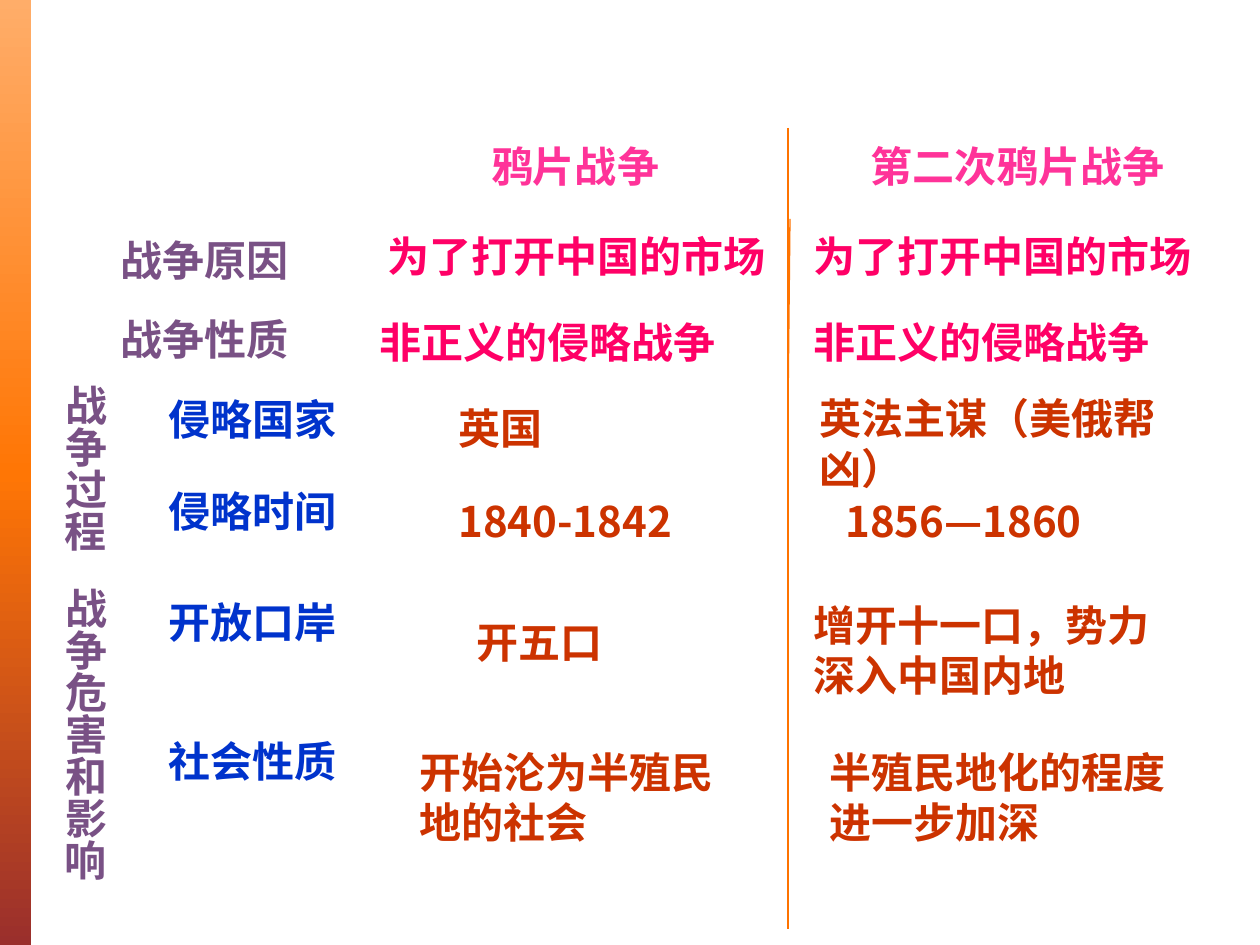
import copy
import pptx
import pptx.util
import pptx.dml.color
import pptx.enum.dml
import pptx.enum.shapes
import pptx.enum.text
import pptx.oxml
import pptx.oxml.ns

PX = 914400 / 126
COLORS = {
    "white": "FFFFFF", "heading": "FF3399", "topic": "795185", "aspect": "0033CC",
    "shared": "FF0066", "detail": "CC3300", "divider": "FE7300",
}
BAR_STOPS = [(0, "FFAD69"), (0.5, "FF7605"), (1, "9A2F2C")]
CJK = "Noto Sans CJK SC"


def px(*lengths):
    return [pptx.util.Emu(round(length * PX)) for length in lengths]


def write(frame, text, color, font=CJK, align=None, spacing=None):
    paragraph = frame.paragraphs[0]
    paragraph.alignment = align
    paragraph.line_spacing = spacing
    run = paragraph.add_run()
    run.text = text
    run.font.size = pptx.util.Pt(24)
    run.font.bold = True
    run.font.name = font
    run.font.color.rgb = pptx.dml.color.RGBColor.from_string(COLORS[color])
    east_asian = pptx.oxml.parse_xml(
        '<a:ea xmlns:a="http://schemas.openxmlformats.org/drawingml/2006/main"/>')
    east_asian.set("typeface", CJK)
    run.font._element.append(east_asian)


deck = pptx.Presentation()
deck.slide_width, deck.slide_height = px(1260, 945)
slide = deck.slides.add_slide(deck.slide_layouts[6])

side_bar = slide.shapes.add_shape(
    pptx.enum.shapes.MSO_SHAPE.RECTANGLE, *px(0, 0, 31, 945))
side_bar.shadow.inherit = False
side_bar.line.fill.background()
side_bar.fill.gradient()
side_bar.fill.gradient_angle = 270
stop_list = side_bar.fill._xPr.find(".//" + pptx.oxml.ns.qn("a:gsLst"))
stop_list.append(copy.deepcopy(stop_list[0]))
for stop, (position, color) in zip(side_bar.fill.gradient_stops, BAR_STOPS):
    stop.position = position
    stop.color.rgb = pptx.dml.color.RGBColor.from_string(color)

column_widths = [96, 215, 430, 455]
row_heights = [94, 78, 76, 92, 111, 139, 190]
frame = slide.shapes.add_table(
    len(row_heights), len(column_widths),
    *px(49, 121, sum(column_widths), sum(row_heights)))
comparison = frame.table
comparison.first_row = comparison.horz_banding = False
style = comparison._tbl.tblPr.find(pptx.oxml.ns.qn("a:tableStyleId"))
style.text = "{2D5ABB26-0587-4C30-8999-92F81FD0307C}"
for column, width in zip(comparison.columns, px(*column_widths)):
    column.width = width
for row, height in zip(comparison.rows, px(*row_heights)):
    row.height = height
for cell in comparison.iter_cells():
    cell.fill.solid()
    cell.fill.fore_color.rgb = pptx.dml.color.RGBColor.from_string(COLORS["white"])

merges = [(0, 0, 0, 1), (1, 0, 1, 1), (1, 2, 1, 3), (2, 0, 2, 1),
          (2, 2, 2, 3), (3, 0, 4, 0), (5, 0, 6, 0)]
for top, left, bottom, right in merges:
    comparison.cell(top, left).merge(comparison.cell(bottom, right))

labels = [
    (0, 2, "鸦片战争", "heading"),
    (0, 3, "第二次鸦片战争", "heading"),
    (1, 0, "战争原因", "topic"),
    (2, 0, "战争性质", "topic"),
    (3, 0, "战争过程", "topic"),
    (3, 1, "侵略国家", "aspect"),
    (4, 1, "侵略时间", "aspect"),
    (5, 0, "战争危害和影响", "topic"),
    (5, 1, "开放口岸", "aspect"),
    (6, 1, "社会性质", "aspect"),
]
for row, column, text, color in labels:
    cell = comparison.cell(row, column)
    upright = column == 0 and row >= 3
    write(cell.text_frame, text, color,
          align=pptx.enum.text.PP_ALIGN.CENTER,
          spacing=pptx.util.Pt(24) if upright else 1.1)
    if upright:
        cell._tc.tcPr.set("vert", "eaVert")
        cell.vertical_anchor = pptx.enum.text.MSO_ANCHOR.MIDDLE
        cell.margin_left, cell.margin_right = px(12, 34)

answers = [
    (375, 224, 444, 63, "为了打开中国的市场", "shared", "Arial"),
    (367, 310, 392, 63, "非正义的侵略战争", "shared", "Arial"),
    (446, 396, 233, 63, "英国", "detail", "Arial"),
    (807, 386, 407, 63, "英法主谋（美俄帮凶）", "detail", "Arial"),
    (446, 489, 301, 63, "1840-1842", "detail", CJK),
    (833, 489, 271, 63, "1856—1860", "detail", CJK),
    (464, 610, 291, 63, "开五口", "detail", CJK),
    (801, 593, 377, 113, "增开十一口，势力深入中国内地", "detail", CJK),
    (407, 740, 328, 113, "开始沦为半殖民地的社会", "detail", "Arial"),
    (817, 740, 388, 113, "半殖民地化的程度进一步加深", "detail", "Arial"),
    (801, 224, 444, 63, "为了打开中国的市场", "shared", "Arial"),
    (801, 310, 392, 63, "非正义的侵略战争", "shared", "Arial"),
]
for left, top, width, height, text, color, font in answers:
    answer = slide.shapes.add_textbox(*px(left, top, width, height))
    answer.text_frame.word_wrap = True
    answer.text_frame.auto_size = pptx.enum.text.MSO_AUTO_SIZE.SHAPE_TO_FIT_TEXT
    write(answer.text_frame, text, color, font=font)

for ends in [(790, 219, 788, 413), (788, 128, 788, 929)]:
    divider = slide.shapes.add_connector(
        pptx.enum.shapes.MSO_CONNECTOR.STRAIGHT, *px(*ends))
    divider.line.width = pptx.util.Pt(0.75)
    divider.line.color.rgb = pptx.dml.color.RGBColor.from_string(COLORS["divider"])
    divider._element.spPr.append(pptx.oxml.parse_xml(
        '<a:effectLst xmlns:a="http://schemas.openxmlformats.org/drawingml/2006/main"/>'))

deck.save("out.pptx")
